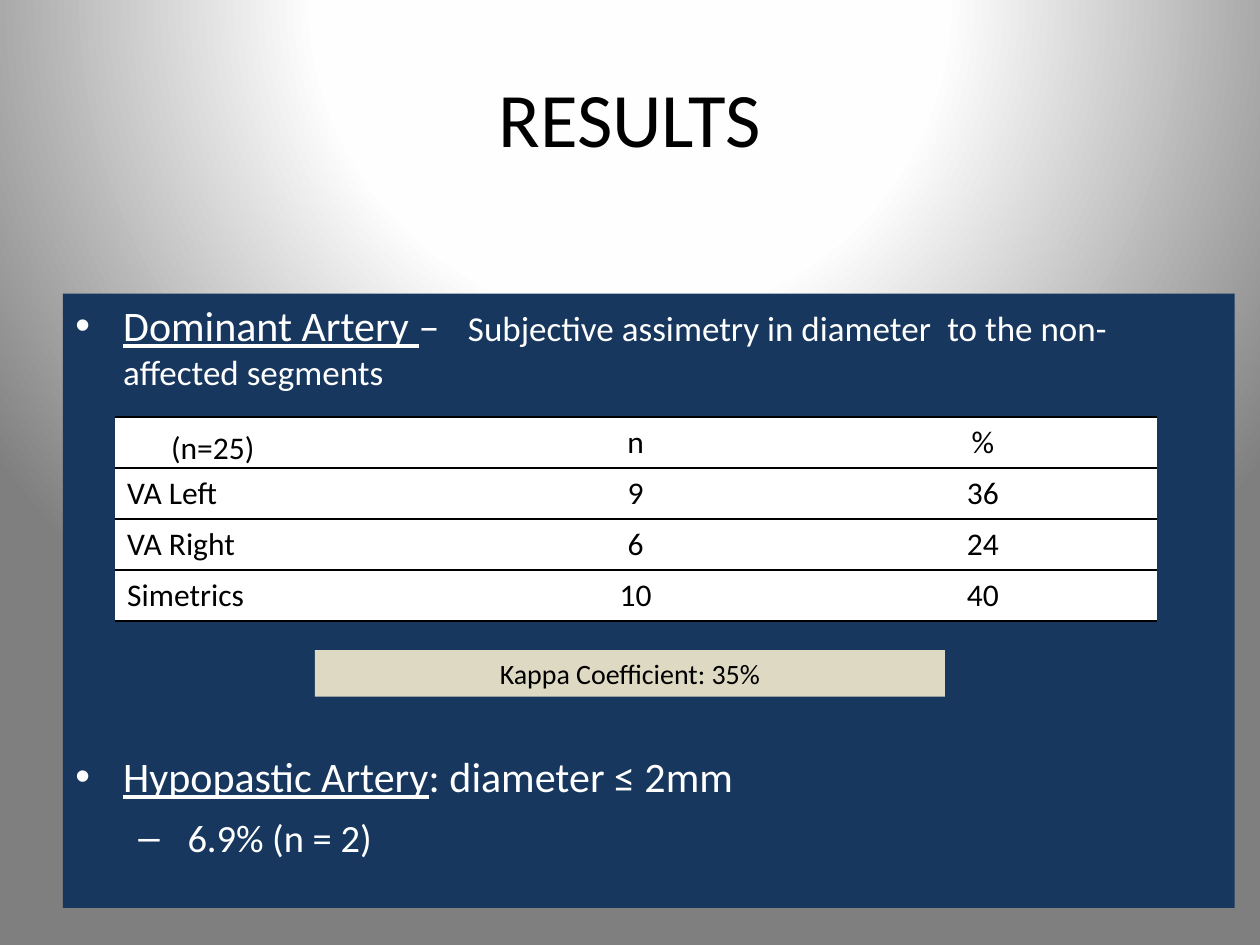
from dataclasses import dataclass, field
from lxml import etree
from pptx import Presentation, util as u
from pptx.dml.color import RGBColor
from pptx.enum import shapes, text
from pptx.oxml import parse_xml
from pptx.oxml.ns import nsdecls, qn

WIDE, HIGH = 10, 7.5
FONT = "Calibri"
BLACK = RGBColor(0, 0, 0)
WHITE = RGBColor(255, 255, 255)
NAVY = RGBColor(0x17, 0x37, 0x5E)
SAND = RGBColor(0xDD, 0xD9, 0xC3)
LEFT, MID = text.PP_ALIGN.LEFT, text.PP_ALIGN.CENTER


@dataclass
class Box:
    """Left, top, width and height as shares of the slide."""
    x: float
    y: float
    w: float
    h: float

    def emu(self) -> tuple:
        return (u.Inches(self.x * WIDE), u.Inches(self.y * HIGH),
                u.Inches(self.w * WIDE), u.Inches(self.h * HIGH))


@dataclass
class Span:
    words: str
    size: float = 24
    line: bool = False
    gap: float = 0  # extra letter spacing in points


@dataclass
class Item:
    mark: str
    left: float
    hang: float
    above: float
    spans: list = field(default_factory=list)


def write(para, words: str, size: float = 18, color: RGBColor = BLACK,
          align=LEFT, line: bool = False, gap: float = 0) -> None:
    para.alignment = align
    run = para.add_run()
    run.text = words
    font = run.font
    font.name, font.size, font.underline = FONT, u.Pt(size), line
    font.color.rgb = color
    if gap:
        run._r.get_or_add_rPr().set("spc", str(int(gap * 100)))


def label(slide, box: Box, words: str, anchor=text.MSO_ANCHOR.TOP,
          **form) -> None:
    frame = slide.shapes.add_textbox(*box.emu()).text_frame
    frame.word_wrap = True
    frame.vertical_anchor = anchor
    write(frame.paragraphs[0], words, **form)


def panel(slide, box: Box, fill: RGBColor):
    shape = slide.shapes.add_shape(shapes.MSO_SHAPE.RECTANGLE, *box.emu())
    shape.shadow.inherit = False
    shape.fill.solid()
    shape.fill.fore_color.rgb = fill
    shape.line.fill.background()
    frame = shape.text_frame
    frame.word_wrap = True
    frame.vertical_anchor = text.MSO_ANCHOR.TOP
    return frame


def bullet(para, item: Item) -> None:
    para.space_before = u.Pt(item.above)
    props = para._p.get_or_add_pPr()
    props.set("marL", str(u.Inches(item.left)))
    props.set("indent", str(-u.Inches(item.hang)))
    etree.SubElement(props, qn("a:buFont")).set("typeface", "Arial")
    etree.SubElement(props, qn("a:buChar")).set("char", item.mark)
    for span in item.spans:
        write(para, span.words, size=span.size, color=WHITE,
              line=span.line, gap=span.gap)


def rule(cell) -> None:
    """Black lines above and below, none at the sides."""
    ink = f'<a:solidFill><a:srgbClr val="{BLACK}"/></a:solidFill>'
    props = cell._tc.get_or_add_tcPr()
    for spot, side in enumerate("LRTB"):
        paint = ink if side in "TB" else "<a:noFill/>"
        props.insert(spot, parse_xml(
            f'<a:ln{side} {nsdecls("a")} w="12700">{paint}</a:ln{side}>'))


def grid(slide, box: Box, rows: list) -> None:
    table = slide.shapes.add_table(len(rows), len(rows[0]), *box.emu()).table
    table.first_row = table.horz_banding = False
    for r, row in enumerate(rows):
        for c, words in enumerate(row):
            cell = table.cell(r, c)
            cell.fill.solid()
            cell.fill.fore_color.rgb = WHITE
            rule(cell)
            if words:
                write(cell.text_frame.paragraphs[0], words,
                      align=MID if c else LEFT)


def backdrop(slide) -> None:
    stops = "".join(
        f'<a:gs pos="{pos * 1000}"><a:srgbClr val="{tone}"/></a:gs>'
        for pos, tone in ((0, "FFFFFF"), (40, "FEFEFE"), (100, "7F7F7F")))
    slide.background.fill.solid()
    props = slide._element.cSld.find(qn("p:bg")).find(qn("p:bgPr"))
    props.replace(props[0], parse_xml(
        f'<a:gradFill {nsdecls("a")} rotWithShape="1"><a:gsLst>{stops}'
        '</a:gsLst><a:path path="circle"><a:fillToRect l="50000" t="-80000" '
        'r="50000" b="180000"/></a:path></a:gradFill>'))


ITEMS = [
    Item("•", 0.38, 0.38, 0, [
        Span("Dominant Artery ", line=True), Span("–"), Span(" ", gap=10.8),
        Span("Subjective assimetry in diameter", 20), Span(" ", 20, gap=4.5),
        Span("to the non-affected segments", 20)]),
    # Room for the table and the kappa strip
    Item("•", 0.38, 0.38, 205, [
        Span("Hypopastic Artery", line=True), Span(": diameter ≤ 2mm")]),
    Item("–", 0.89, 0.39, 7, [Span("6.9% (n = 2)", 22)]),
]
ROWS = [
    ("", "n", "%"),
    ("VA Left", "9", "36"),
    ("VA Right", "6", "24"),
    ("Simetrics", "10", "40"),
]


def main() -> None:
    deck = Presentation()
    deck.slide_width, deck.slide_height = u.Inches(WIDE), u.Inches(HIGH)
    slide = deck.slides.add_slide(deck.slide_layouts[6])
    backdrop(slide)

    # Title
    label(slide, Box(0.05, 0.04, 0.9, 1 / 6), "RESULTS",
          anchor=text.MSO_ANCHOR.MIDDLE, size=44, align=MID)

    # Bulleted panel
    frame = panel(slide, Box(0.05, 2.33 / HIGH, 0.93, 0.65), NAVY)
    for i, item in enumerate(ITEMS):
        bullet(frame.add_paragraph() if i else frame.paragraphs[0], item)

    # Table with its sample size
    grid(slide, Box(0.091, 3.31 / HIGH, 0.827, 1.62 / HIGH), ROWS)
    label(slide, Box(0.126, 3.35 / HIGH, 0.118, 0.4 / HIGH), "(n=25)")

    # Kappa strip
    strip = panel(slide, Box(0.25, 5.16 / HIGH, 0.5, 0.37 / HIGH), SAND)
    write(strip.paragraphs[0], "Kappa Coefficient: 35%", size=16, align=MID)

    deck.save("out.pptx")


if __name__ == "__main__":
    main()
